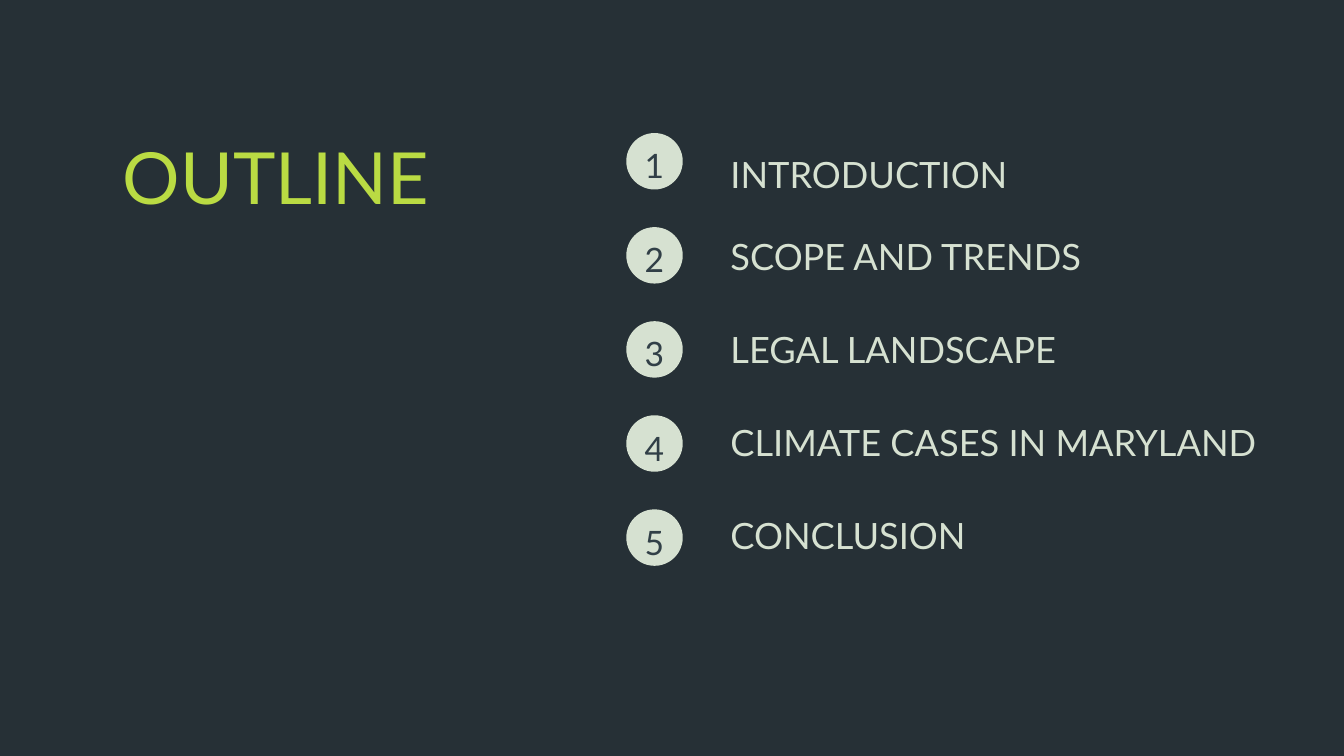
import pptx
import pptx.dml.color
import pptx.enum.shapes
import pptx.enum.text
import pptx.util
from pptx.util import Inches, Pt

WIDTH, HEIGHT = 20, 11.25
DARK, LIME, PALE, SLATE = "263036", "BADB43", "D6E1D1", "313F47"
ITEMS = ["INTRODUCTION", "SCOPE AND TRENDS", "LEGAL LANDSCAPE",
         "CLIMATE CASES IN MARYLAND", "CONCLUSION"]
ROW = 1.4
BADGE = 0.84
ALIGN = pptx.enum.text.PP_ALIGN
ANCHOR = pptx.enum.text.MSO_ANCHOR


def paint(color_format, value):
    color_format.rgb = pptx.dml.color.RGBColor.from_string(value)


def place(sp, left, top, width, height):
    box = dict(left=left, top=top, width=width, height=height)
    for name, value in box.items():
        setattr(sp, name, Inches(value))


def frame(sp, anchor):
    """Clear the margins of a shape's text frame and return it."""
    tf = sp.text_frame
    settings = dict(margin_left=0, margin_top=0, margin_right=0, margin_bottom=0,
                    word_wrap=True, vertical_anchor=anchor,
                    auto_size=pptx.enum.text.MSO_AUTO_SIZE.NONE)
    for name, value in settings.items():
        setattr(tf, name, value)
    return tf


def write(p, text, size, color, spacing, align=ALIGN.LEFT, before=0):
    p.text = text
    settings = dict(alignment=align, line_spacing=Pt(spacing), space_before=Pt(before))
    for name, value in settings.items():
        setattr(p, name, value)
    font = p.runs[0].font
    for name, value in dict(name="Lato", size=Pt(size), bold=False).items():
        setattr(font, name, value)
    paint(font.color, color)


def remove_bullet(p):
    pPr = p._p.get_or_add_pPr()
    pPr.set("marL", "0")
    pPr.set("indent", "0")
    pPr.append(pptx.oxml.parse_xml(
        '<a:buNone xmlns:a="http://schemas.openxmlformats.org/drawingml/2006/main"/>'))


def add_title(s, left, top, width, height):
    sp = s.shapes.title
    place(sp, left, top, width, height)
    write(frame(sp, ANCHOR.TOP).paragraphs[0], "OUTLINE", 77, LIME, 92.4)


def add_badges(s, left, top):
    """Number the rows with a column of discs."""
    for i in range(len(ITEMS)):
        sp = s.shapes.add_shape(
            pptx.enum.shapes.MSO_SHAPE.OVAL, Inches(left), Inches(top + i * ROW),
            Inches(BADGE), Inches(BADGE))
        sp.shadow.inherit = False
        sp.fill.solid()
        paint(sp.fill.fore_color, PALE)
        sp.line.fill.background()
        tf = frame(sp, ANCHOR.MIDDLE)
        write(tf.paragraphs[0], str(i + 1), 36, SLATE, 52, ALIGN.CENTER)


def add_items(s, left, top, width, height):
    sp = s.placeholders[1]
    place(sp, left, top, width, height)
    tf = frame(sp, ANCHOR.TOP)
    gaps = [0, 49] + [61] * (len(ITEMS) - 2)
    for i, (item, gap) in enumerate(zip(ITEMS, gaps)):
        p = tf.add_paragraph() if i else tf.paragraphs[0]
        remove_bullet(p)
        write(p, item, 38.8, PALE, 38.8, before=gap)


def main():
    prs = pptx.Presentation()
    prs.slide_width, prs.slide_height = Inches(WIDTH), Inches(HEIGHT)
    s = prs.slides.add_slide(prs.slide_layouts[1])
    s.background.fill.solid()
    paint(s.background.fill.fore_color, DARK)
    add_title(s, 1.83, 1.98, 7.2, 1.28)
    add_badges(s, 9.32, 1.98)
    add_items(s, 10.87, 2.37, WIDTH - 10.87, 5.95)
    prs.save("out.pptx")


if __name__ == "__main__":
    main()
